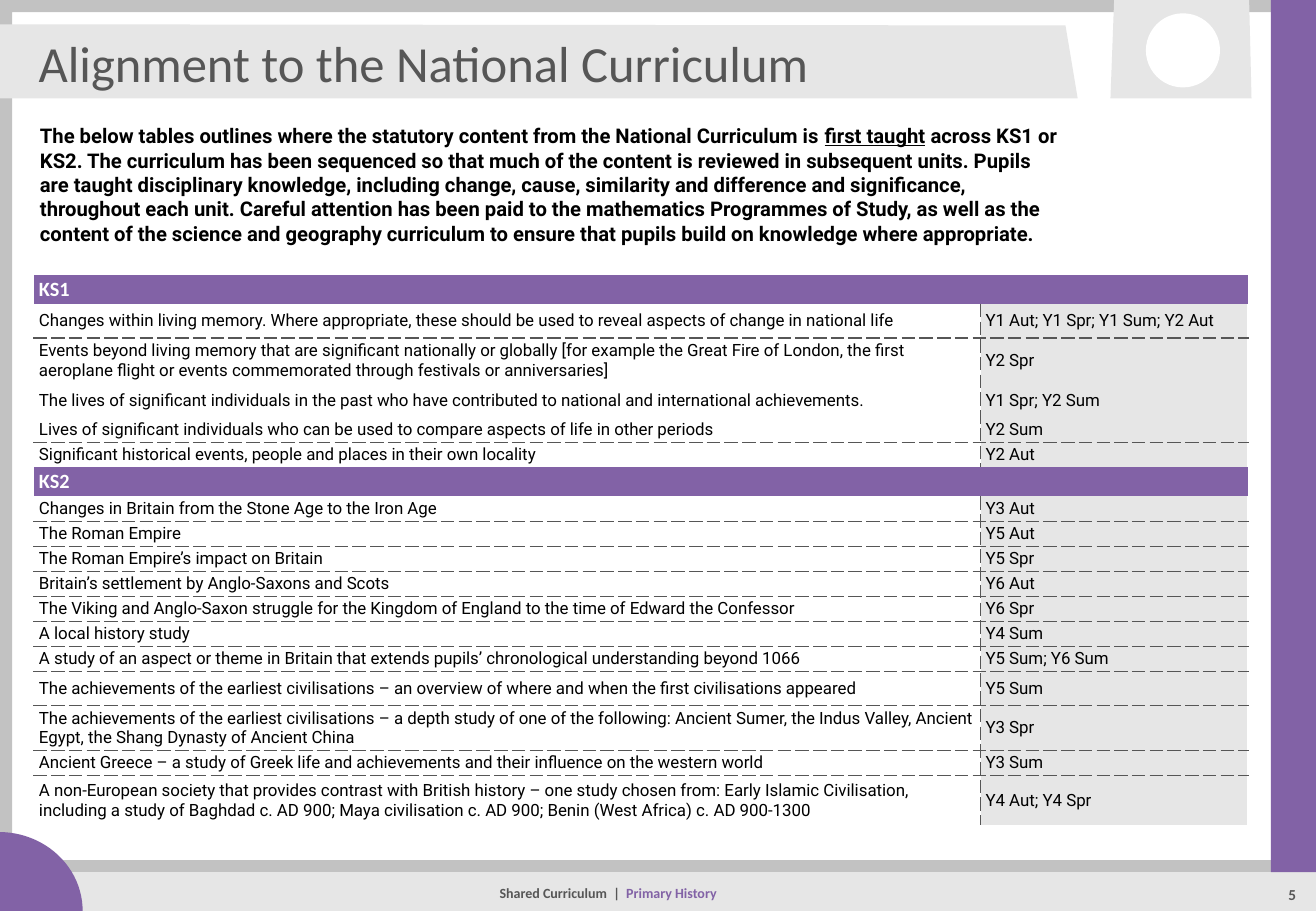
"""Builds the slide that maps the history curriculum to the National Curriculum."""
from dataclasses import dataclass

from lxml.etree import SubElement
from pptx import Presentation
from pptx.dml.color import RGBColor
from pptx.enum.shapes import MSO_CONNECTOR, MSO_SHAPE
from pptx.enum.text import MSO_ANCHOR, PP_ALIGN
from pptx.oxml.ns import qn
from pptx.util import Pt


@dataclass(frozen=True)
class Theme:
    purple: str = "8262A6"
    ink: str = "565656"
    black: str = "000000"
    white: str = "FFFFFF"
    pale: str = "E6E6E6"
    grey: str = "C2C2C2"
    heading_font: str = "Calibri"
    body_font: str = "Roboto"
    title_size: float = 30
    lead_size: float = 12
    cell_size: float = 10
    page_size: float = 9
    footer_size: float = 8.3


THEME = Theme()
WIDTH, HEIGHT = 779.8, 540
LOW, MEDIUM, TALL = 10.8, 20.2, 29.5
COLUMN_WIDTHS = (560.9, 158.4)

INTRODUCTION = (
    ("The below tables outlines where the statutory content from the National Curriculum is ", False),
    ("first taught", True),
    (" across KS1 or KS2. The curriculum has been sequenced so that much of the content is reviewed in "
     "subsequent units. Pupils are taught disciplinary knowledge, including change, cause, similarity and "
     "difference and significance, throughout each unit. Careful attention has been paid to the mathematics "
     "Programmes of Study, as well as the content of the science and geography curriculum to ensure that "
     "pupils build on knowledge where appropriate.", False),
)

STAGES = {
    "KS1": (
        ("Changes within living memory. Where appropriate, these should be used to reveal aspects of change "
         "in national life", "Y1 Aut; Y1 Spr; Y1 Sum; Y2 Aut", MEDIUM),
        ("Events beyond living memory that are significant nationally or globally [for example the Great Fire "
         "of London, the first aeroplane flight or events commemorated through festivals or anniversaries]",
         "Y2 Spr", MEDIUM),
        ("The lives of significant individuals in the past who have contributed to national and international "
         "achievements.", "Y1 Spr; Y2 Sum", MEDIUM),
        ("Lives of significant individuals who can be used to compare aspects of life in other periods",
         "Y2 Sum", LOW),
        ("Significant historical events, people and places in their own locality", "Y2 Aut", LOW),
    ),
    "KS2": (
        ("Changes in Britain from the Stone Age to the Iron Age", "Y3 Aut", LOW),
        ("The Roman Empire", "Y5 Aut", LOW),
        ("The Roman Empire’s impact on Britain", "Y5 Spr", LOW),
        ("Britain’s settlement by Anglo-Saxons and Scots", "Y6 Aut", LOW),
        ("The Viking and Anglo-Saxon struggle for the Kingdom of England to the time of Edward the Confessor",
         "Y6 Spr", LOW),
        ("A local history study", "Y4 Sum", LOW),
        ("A study of an aspect or theme in Britain that extends pupils’ chronological understanding beyond 1066",
         "Y5 Sum; Y6 Sum", LOW),
        ("The achievements of the earliest civilisations – an overview of where and when the first "
         "civilisations appeared", "Y5 Sum", MEDIUM),
        ("The achievements of the earliest civilisations – a depth study of one of the following: Ancient "
         "Sumer, the Indus Valley, Ancient Egypt, the Shang Dynasty of Ancient China", "Y3 Spr", MEDIUM),
        ("Ancient Greece – a study of Greek life and achievements and their influence on the western world",
         "Y3 Sum", LOW),
        ("A non-European society that provides contrast with British history – one study chosen from: Early "
         "Islamic Civilisation, including a study of Baghdad c. AD 900; Maya civilisation c. AD 900; Benin "
         "(West Africa) c. AD 900-1300", "Y4 Aut; Y4 Spr", TALL),
    ),
}
UNRULED = {("KS1", 1), ("KS1", 2)}


def paint(shape, color):
    shape.shadow.inherit = False
    shape.fill.solid()
    shape.fill.fore_color.rgb = RGBColor.from_string(color)
    shape.line.fill.background()


def add_block(slide, kind, left, top, width, height, color):
    shape = slide.shapes.add_shape(kind, Pt(left), Pt(top), Pt(width), Pt(height))
    paint(shape, color)
    return shape


def add_outline(slide, points, color):
    start, *others = [(Pt(x), Pt(y)) for x, y in points]
    builder = slide.shapes.build_freeform(*start)
    builder.add_line_segments(others, close=True)
    paint(builder.convert_to_shape(), color)


def add_rule(slide, left, right, top, width, color):
    connector = slide.shapes.add_connector(MSO_CONNECTOR.STRAIGHT, Pt(left), Pt(top), Pt(right), Pt(top))
    connector.line.width = Pt(width)
    connector.line.color.rgb = RGBColor.from_string(color)
    SubElement(connector._element.spPr, qn("a:effectLst"))


def write_text(paragraph, text, size, font=THEME.heading_font, color=THEME.ink, bold=False, underline=False):
    run = paragraph.add_run()
    run.text = text
    run.font.size = Pt(size)
    run.font.name = font
    run.font.bold = bold
    run.font.underline = underline
    run.font.color.rgb = RGBColor.from_string(color)


def add_text_box(slide, left, top, width, height, anchor=MSO_ANCHOR.TOP, align=PP_ALIGN.LEFT, spacing=1.0):
    frame = slide.shapes.add_textbox(Pt(left), Pt(top), Pt(width), Pt(height)).text_frame
    frame.word_wrap = True
    frame.vertical_anchor = anchor
    paragraph = frame.paragraphs[0]
    paragraph.alignment = align
    paragraph.line_spacing = spacing
    return paragraph


def set_border(cell, side, color=None, dash="solid"):
    line = SubElement(cell._tc.get_or_add_tcPr(), qn(f"a:ln{side}"), w=str(Pt(1)))
    if color is None:
        SubElement(line, qn("a:noFill"))
        return
    SubElement(SubElement(line, qn("a:solidFill")), qn("a:srgbClr"), val=color)
    SubElement(line, qn("a:prstDash"), val=dash)


def fill_cell(cell, text, fill, borders, anchor=MSO_ANCHOR.MIDDLE, **text_format):
    cell.margin_left = cell.margin_right = Pt(2.9)
    cell.margin_top = cell.margin_bottom = Pt(1.4)
    cell.vertical_anchor = anchor
    for side, border in zip("LRTB", borders):
        set_border(cell, side, *border)
    cell.fill.solid()
    cell.fill.fore_color.rgb = RGBColor.from_string(fill)
    write_text(cell.text_frame.paragraphs[0], text, **text_format)


def add_curriculum_table(slide):
    heights = [height for units in STAGES.values() for height in (LOW, *(unit[2] for unit in units))]
    table = slide.shapes.add_table(len(heights), 2, Pt(20.2), Pt(162.9), Pt(sum(COLUMN_WIDTHS)),
                                   Pt(sum(heights))).table
    table.first_row = table.horz_banding = False
    for column, width in zip(table.columns, COLUMN_WIDTHS):
        column.width = Pt(width)
    for row, height in zip(table.rows, heights):
        row.height = Pt(height)
    empty, edge, dashed = (), (THEME.white,), (THEME.ink, "sysDash")
    row_index = 0
    for stage, units in STAGES.items():
        table.cell(row_index, 0).merge(table.cell(row_index, 1))
        fill_cell(table.cell(row_index, 0), stage, THEME.purple, [empty] * 4, MSO_ANCHOR.TOP,
                  size=THEME.lead_size, color=THEME.white, bold=True)
        above = empty
        for index, (content, terms, _) in enumerate(units):
            row_index += 1
            is_last = index == len(units) - 1
            below = empty if is_last or (stage, index) in UNRULED else dashed
            sides = ((content, THEME.white, edge, dashed), (terms, THEME.pale, dashed, edge))
            for column, (text, fill, left, right) in enumerate(sides):
                fill_cell(table.cell(row_index, column), text, fill, (left, right, above, below),
                          size=THEME.cell_size, font=THEME.body_font, color=THEME.black)
            above = below
        row_index += 1


def add_backdrop(slide):
    frame = add_block(slide, MSO_SHAPE.FRAME, 0, 0, WIDTH, HEIGHT, THEME.grey)
    frame.adjustments[0] = 7.2 / HEIGHT
    add_block(slide, MSO_SHAPE.RECTANGLE, 23, 517, WIDTH - 23, 23, THEME.pale)
    add_rule(slide, 3.6, WIDTH, 513.4, 7, THEME.grey)
    add_block(slide, MSO_SHAPE.ARC, -50.4, 493.2, 99.4, 93.6, THEME.purple)
    add_outline(slide, [(658, 58.3), (741.6, 58.3), (740.2, 0), (660.2, 0)], THEME.pale)
    add_block(slide, MSO_SHAPE.OVAL, 679, 7.9, 43.9, 43.9, THEME.white)
    add_outline(slide, [(-1.4, 14.4), (-0.7, 58.3), (638.6, 58.3), (631.4, 15.1)], THEME.pale)
    add_block(slide, MSO_SHAPE.RECTANGLE, 753.1, 0, WIDTH - 753.1, 517, THEME.purple)


def main():
    presentation = Presentation()
    presentation.slide_width, presentation.slide_height = Pt(WIDTH), Pt(HEIGHT)
    slide = presentation.slides.add_slide(presentation.slide_layouts[6])
    add_backdrop(slide)
    footer = add_text_box(slide, 147.6, 519.1, 425.5, 21.6, MSO_ANCHOR.MIDDLE, PP_ALIGN.CENTER, 0.9)
    write_text(footer, "Shared Curriculum  |  ", THEME.footer_size, bold=True)
    write_text(footer, "Primary History", THEME.footer_size, color=THEME.purple, bold=True)
    page = add_text_box(slide, 743.8, 519.1, 44, 20.2, align=PP_ALIGN.CENTER, spacing=1.2)
    write_text(page, "5", THEME.page_size, bold=True)
    title = add_text_box(slide, 15.8, 18.7, 606.2, 36, MSO_ANCHOR.MIDDLE)
    write_text(title, "Alignment to the National Curriculum", THEME.title_size)
    add_curriculum_table(slide)
    introduction = add_text_box(slide, 16.6, 69.8, 621.4, 72)
    for text, underline in INTRODUCTION:
        write_text(introduction, text, THEME.lead_size, THEME.body_font, THEME.black, True, underline)
    presentation.save("out.pptx")


if __name__ == "__main__":
    main()
